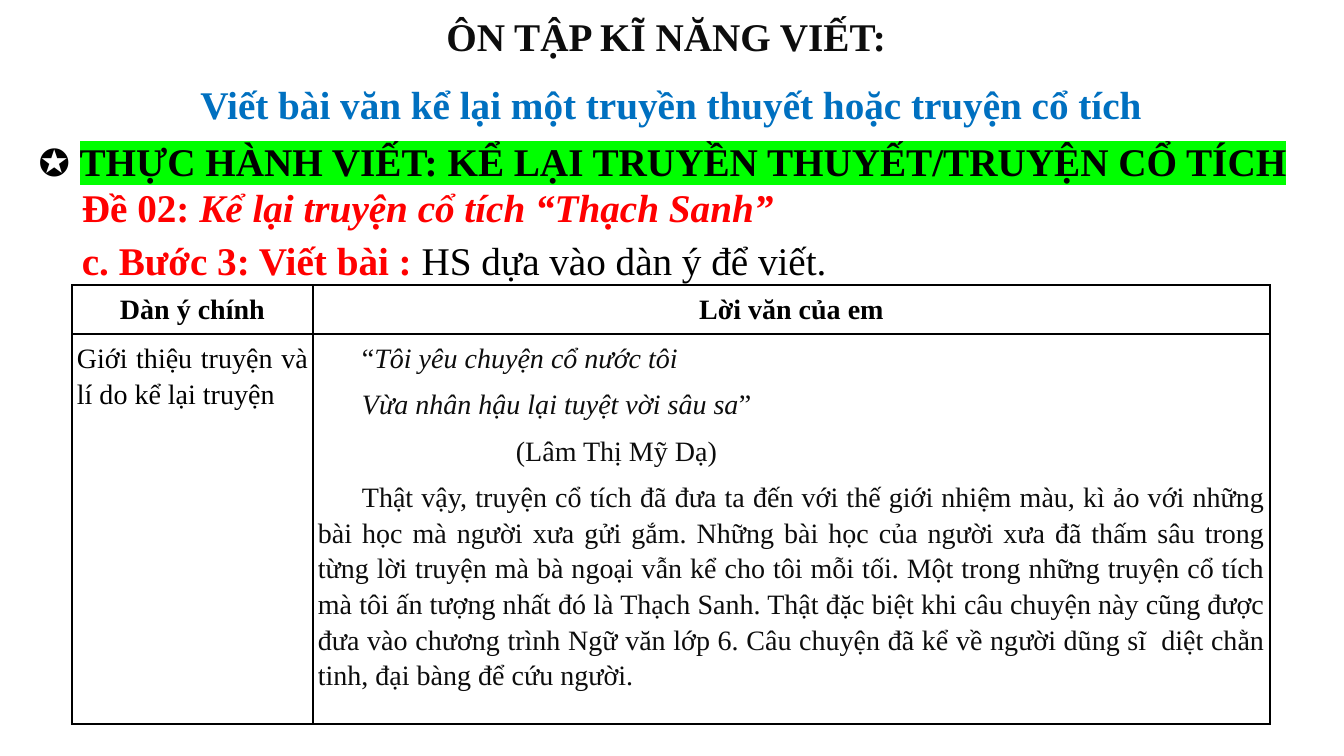
"""Build the writing-practice slide on retelling the Thạch Sanh tale."""
from lxml.etree import SubElement
from pptx import Presentation
from pptx.dml.color import RGBColor
from pptx.enum.text import MSO_AUTO_SIZE as AUTO, PP_ALIGN as ALIGN
from pptx.oxml import parse_xml
from pptx.oxml.ns import nsdecls, qn
from pptx.util import Pt

PX = 914400 / 100.8
SLIDE = (1344, 756)
FONT = "Times New Roman"
BLACK, INK, BLUE, RED, GREEN = "000000", "0D0D0D", "0070C0", "FF0000", "00FF00"
BOLD, ITALIC = {"bold": True}, {"italic": True}
CENTER = {"alignment": ALIGN.CENTER}
JUSTIFY = {"alignment": ALIGN.JUSTIFY}
AFTER = {"space_after": Pt(10)}
STORY = {**JUSTIFY, "space_before": Pt(7.5)}
HEADING_SIZE, TABLE_SIZE = 28, 20
FIRST_LINE, AUTHOR_LINE = 44, 198

# fmt: off
HEADINGS = [
    ((72, 0, 1198, 134), True, [
        ({**CENTER, **AFTER}, 0, [("ÔN TẬP KĨ NĂNG VIẾT: ", INK, BOLD)]),
        ({**CENTER, **AFTER}, 0, [
            ("Viết bài văn kể lại một truyền thuyết hoặc truyện cổ tích", BLUE, BOLD)]),
    ]),
    ((29, 125, 1285, 61), False, [
        (JUSTIFY, 0, [
            ("✪ ", BLACK, {}),
            ("THỰC HÀNH VIẾT: KỂ LẠI TRUYỀN THUYẾT/TRUYỆN CỔ TÍCH", BLACK, BOLD, GREEN)]),
    ]),
    ((72, 171, 720, 65), False, [
        ({**JUSTIFY, **AFTER}, 0, [
            ("Đề 02: ", RED, BOLD),
            ("Kể lại truyện cổ tích “Thạch Sanh”", RED, {**BOLD, **ITALIC})]),
    ]),
    ((72, 224, 773, 60), False, [
        (JUSTIFY, 0, [
            ("c. Bước 3: Viết bài : ", RED, BOLD),
            ("HS dựa vào dàn ý để viết.", BLACK, {})]),
    ]),
]

OUTLINE_AT = (72, 285)
OUTLINE_COLUMNS = (241, 957)
OUTLINE_ROWS = (49, 390)
OUTLINE = [
    [
        [(CENTER, 0, [("Dàn ý chính", BLACK, BOLD)])],
        [(CENTER, 0, [("Lời văn của em", BLACK, BOLD)])],
    ],
    [
        [(JUSTIFY, 0, [("Giới thiệu truyện và lí do kể lại truyện", BLACK, {})])],
        [
            (STORY, FIRST_LINE, [("“", INK, {}), ("Tôi yêu chuyện cổ nước tôi", INK, ITALIC)]),
            (STORY, FIRST_LINE, [("Vừa nhân hậu lại tuyệt vời sâu sa", INK, ITALIC), ("”", INK, {})]),
            (STORY, AUTHOR_LINE, [("(Lâm Thị Mỹ Dạ)", INK, {})]),
            (STORY, FIRST_LINE, [(
                "Thật vậy, truyện cổ tích đã đưa ta đến với thế giới nhiệm màu, kì ảo với những "
                "bài học mà người xưa gửi gắm. Những bài học của người xưa đã thấm sâu trong "
                "từng lời truyện mà bà ngoại vẫn kể cho tôi mỗi tối. Một trong những truyện cổ tích "
                "mà tôi ấn tượng nhất đó là Thạch Sanh. Thật đặc biệt khi câu chuyện này cũng được "
                "đưa vào chương trình Ngữ văn lớp 6. Câu chuyện đã kể về người dũng sĩ  diệt chằn "
                "tinh, đại bàng để cứu người.", INK, {})]),
        ],
    ],
]
# fmt: on


def px(length):
    return round(length * PX)


def color(hex_code):
    return RGBColor.from_string(hex_code)


def apply(target, values):
    for name, value in values.items():
        setattr(target, name, value)


def add_run(paragraph, size, wording, ink, style, highlight=None):
    run = paragraph.add_run()
    run.text = wording
    apply(run.font, {"name": FONT, "size": Pt(size), "bold": False, "italic": False, **style})
    run.font.color.rgb = color(ink)
    if highlight:
        marker = parse_xml(
            f'<a:highlight {nsdecls("a")}><a:srgbClr val="{highlight}"/></a:highlight>'
        )
        run.font.fill._xPr.find(qn("a:solidFill")).addnext(marker)


def write(frame, paragraphs, size):
    for number, (layout, indent, runs) in enumerate(paragraphs):
        paragraph = frame.add_paragraph() if number else frame.paragraphs[0]
        apply(paragraph, {"line_spacing": 1.15, **layout})
        if indent:
            properties = paragraph._p.get_or_add_pPr()
            properties.set("marL", "0")
            properties.set("indent", str(px(indent)))
        for run in runs:
            add_run(paragraph, size, *run)


def add_borders(cell):
    properties = cell._tc.get_or_add_tcPr()
    for side in "LRTB":
        border = SubElement(properties, qn(f"a:ln{side}"), w=str(Pt(1)))
        SubElement(SubElement(border, qn("a:solidFill")), qn("a:srgbClr"), val=BLACK)


def add_heading(slide, box, wrap, paragraphs):
    frame = slide.shapes.add_textbox(*map(px, box)).text_frame
    apply(frame, {"word_wrap": wrap, "auto_size": AUTO.SHAPE_TO_FIT_TEXT})
    write(frame, paragraphs, HEADING_SIZE)


def add_outline(slide):
    extent = (sum(OUTLINE_COLUMNS), sum(OUTLINE_ROWS))
    outline = slide.shapes.add_table(
        len(OUTLINE_ROWS), len(OUTLINE_COLUMNS), *map(px, OUTLINE_AT + extent)
    ).table
    for column, width in zip(outline.columns, OUTLINE_COLUMNS):
        column.width = px(width)
    margins = dict.fromkeys(
        ("margin_left", "margin_right", "margin_top", "margin_bottom"), px(5)
    )
    for row, height, entries in zip(outline.rows, OUTLINE_ROWS, OUTLINE):
        row.height = px(height)
        for cell, paragraphs in zip(row.cells, entries):
            apply(cell, margins)
            add_borders(cell)
            cell.fill.background()
            write(cell.text_frame, paragraphs, TABLE_SIZE)


def main():
    deck = Presentation()
    deck.slide_width, deck.slide_height = map(px, SLIDE)
    slide = deck.slides.add_slide(deck.slide_layouts[6])
    for heading in HEADINGS:
        add_heading(slide, *heading)
    add_outline(slide)
    deck.save("out.pptx")


if __name__ == "__main__":
    main()
